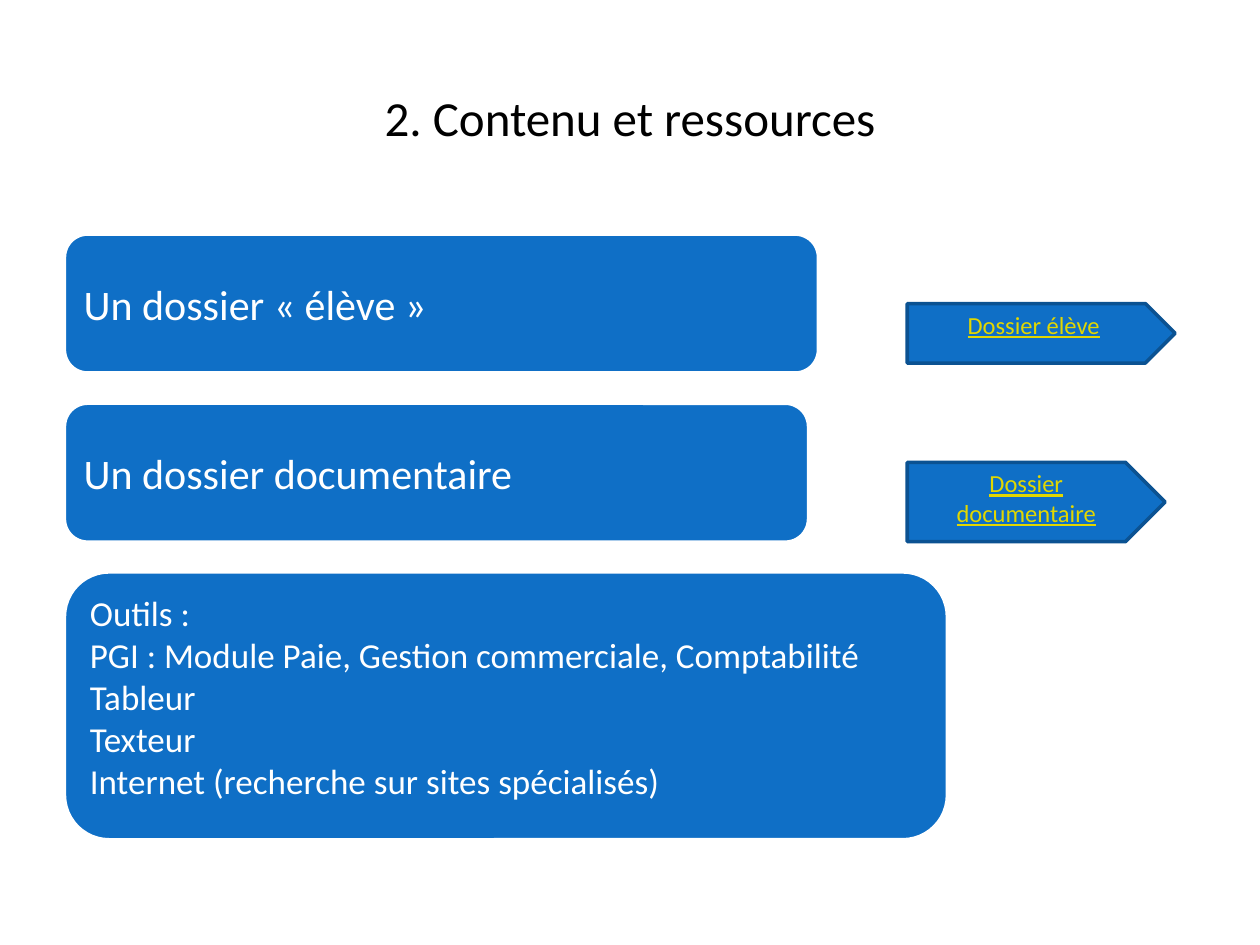
from pptx import Presentation
from pptx.dml.color import RGBColor
from pptx.enum.shapes import MSO_SHAPE
from pptx.enum.text import MSO_ANCHOR, PP_ALIGN
from pptx.util import Cm, Pt

ROUNDED, ARROW = MSO_SHAPE.ROUNDED_RECTANGLE, MSO_SHAPE.PENTAGON
TOP, MIDDLE = MSO_ANCHOR.TOP, MSO_ANCHOR.MIDDLE
LEFT, CENTER = PP_ALIGN.LEFT, PP_ALIGN.CENTER

BLACK = RGBColor(0x00, 0x00, 0x00)
WHITE = RGBColor(0xFF, 0xFF, 0xFF)
BLUE = RGBColor(0x0F, 0x6F, 0xC6)
DARK_BLUE = RGBColor(0x0B, 0x52, 0x92)
YELLOW = RGBColor(0xE2, 0xD7, 0x00)

TITLE = "2. Contenu et ressources"
TOOLS = [
    "Outils :",
    "PGI : Module Paie, Gestion commerciale, Comptabilité",
    "Tableur",
    "Texteur",
    "Internet (recherche sur sites spécialisés)",
]
PANEL_X, ARROW_X = 1.3, 18.29
# lines, top, width, height (cm), text size, anchor
PANELS = [
    (TOOLS, 11.53, 17.8, 5.4, 20, TOP),
    (["Un dossier «\u00a0élève\u00a0»"], 4.72, 15.2, 2.8, 24, MIDDLE),
    (["Un dossier documentaire"], 8.13, 15, 2.8, 24, MIDDLE),
]
# label, top, width, height (cm)
ARROWS = [
    ("Dossier élève", 6.12, 5.4, 1.2),
    ("Dossier documentaire", 9.32, 5.2, 1.6),
]


def write(shape, lines, size, color, align, anchor, underline=False):
    frame = shape.text_frame
    frame.word_wrap = True
    frame.vertical_anchor = anchor
    for i, line in enumerate(lines):
        paragraph = frame.paragraphs[0] if i == 0 else frame.add_paragraph()
        paragraph.alignment = align
        run = paragraph.add_run()
        run.text = line
        run.font.name = "Calibri"
        run.font.size = Pt(size)
        run.font.color.rgb = color
        if underline:
            run.font.underline = True


def add_box(slide, kind, left, top, width, height, outline):
    box = slide.shapes.add_shape(kind, Cm(left), Cm(top), Cm(width), Cm(height))
    box.shadow.inherit = False
    box.fill.solid()
    box.fill.fore_color.rgb = BLUE
    box.line.color.rgb = outline
    box.line.width = Pt(2)
    return box


def main():
    prs = Presentation()
    prs.slide_width, prs.slide_height = Cm(25.4), Cm(19.05)
    slide = prs.slides.add_slide(prs.slide_layouts[6])

    title = slide.shapes.add_textbox(Cm(1.27), Cm(0.76), Cm(22.86), Cm(3.18))
    write(title, [TITLE], 28, BLACK, CENTER, MIDDLE)

    for lines, top, width, height, size, anchor in PANELS:
        panel = add_box(slide, ROUNDED, PANEL_X, top, width, height, WHITE)
        write(panel, lines, size, WHITE, LEFT, anchor)

    for label, top, width, height in ARROWS:
        arrow = add_box(slide, ARROW, ARROW_X, top, width, height, DARK_BLUE)
        write(arrow, [label], 14, YELLOW, CENTER, TOP, underline=True)

    prs.save("out.pptx")


if __name__ == "__main__":
    main()
